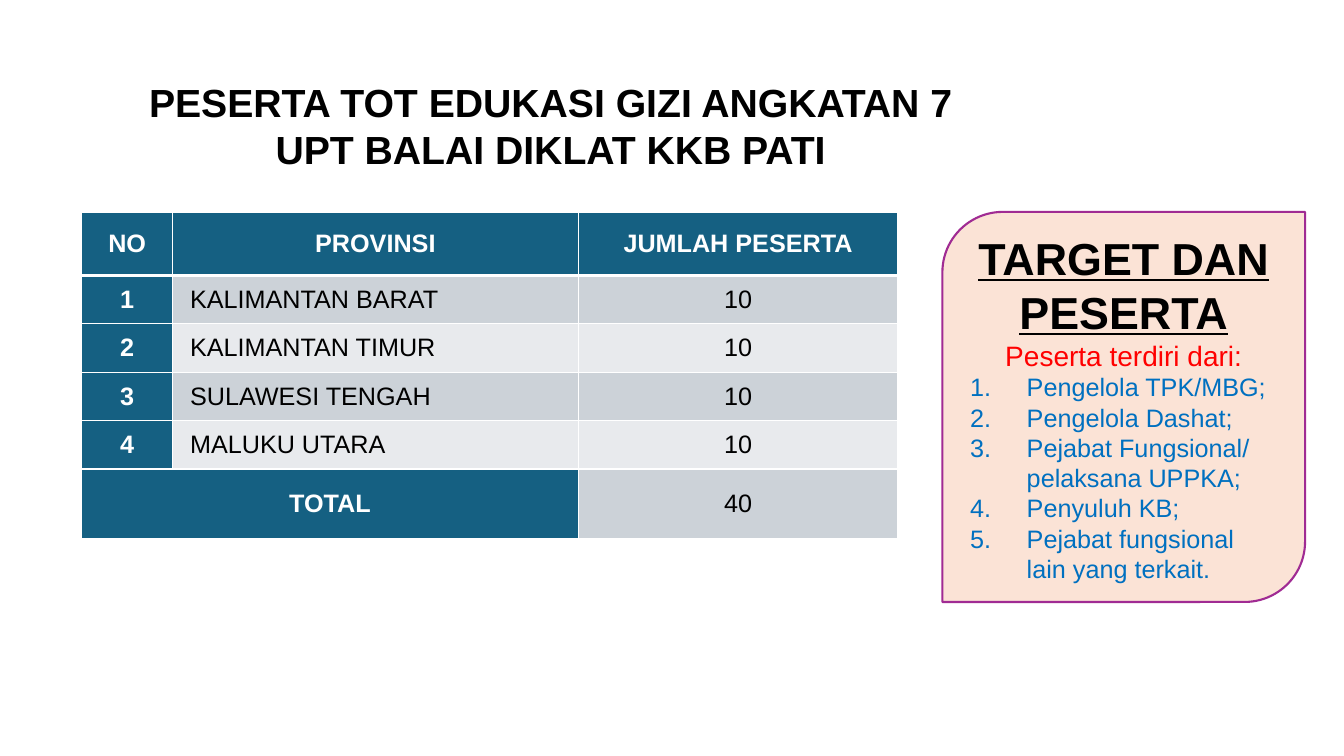
from lxml import etree
from pptx import Presentation
from pptx import util as u
from pptx.dml.color import RGBColor
from pptx.enum import shapes, text
from pptx.oxml import ns

COLORS = {"header": "156082", "odd": "CCD2D8", "even": "E8EAED", "white": "FFFFFF",
          "black": "000000", "panel": "FBE3D6", "outline": "A02B93",
          "red": "FF0000", "blue": "0070C0"}
CENTER, LEFT = text.PP_ALIGN.CENTER, text.PP_ALIGN.LEFT


def write(paragraph, words, align, color, **font):
    paragraph.alignment = align
    run = paragraph.add_run()
    run.text = words
    for name, value in {"name": "Arial", **font}.items():
        setattr(run.font, name, value)
    run.font.color.rgb = RGBColor.from_string(COLORS[color])


def add_xml(parent, tag, **attributes):
    return etree.SubElement(parent, ns.qn(tag), **attributes)


deck = Presentation()
deck.slide_width, deck.slide_height = u.Cm(33.87), u.Cm(19.05)
slide = deck.slides.add_slide(deck.slide_layouts[5])

# Title
title = slide.shapes.title
place = {"left": 3.18, "top": 1.85, "width": 21.39, "height": 2.64}
for side, length in place.items():
    setattr(title, side, u.Cm(length))
heading = title.text_frame
heading_format = {"word_wrap": True, "vertical_anchor": text.MSO_ANCHOR.TOP,
                  "auto_size": text.MSO_AUTO_SIZE.NONE}
for name, value in heading_format.items():
    setattr(heading, name, value)
for i, line in enumerate(["PESERTA TOT EDUKASI GIZI ANGKATAN 7", "UPT BALAI DIKLAT KKB PATI"]):
    paragraph = heading.add_paragraph() if i else heading.paragraphs[0]
    write(paragraph, line, CENTER, "black", size=u.Pt(28), bold=True)

# Participants per province
provinces = ["KALIMANTAN BARAT", "KALIMANTAN TIMUR", "SULAWESI TENGAH", "MALUKU UTARA"]
quota = 10
rows = [["NO", "PROVINSI", "JUMLAH PESERTA"]]
rows += [[str(n), province, str(quota)] for n, province in enumerate(provinces, 1)]
rows.append(["TOTAL", "", str(quota * len(provinces))])
last = len(rows) - 1

participants = slide.shapes.add_table(len(rows), 3, u.Cm(2.06), u.Cm(5.34),
                                      u.Cm(20.57), u.Cm(8.24)).table
for column, width in zip(participants.columns, [2.29, 10.22, 8.06]):
    column.width = u.Cm(width)
for row, height in zip(participants.rows, [1.6] + [1.22] * len(provinces) + [1.76]):
    row.height = u.Cm(height)
participants.cell(last, 0).merge(participants.cell(last, 1))

cell_format = {"margin_left": u.Cm(0.08), "margin_right": u.Cm(0.08), "margin_top": 0,
               "margin_bottom": 0, "vertical_anchor": text.MSO_ANCHOR.MIDDLE}
for r, values in enumerate(rows):
    for c, value in enumerate(values):
        cell = participants.cell(r, c)
        for name, setting in cell_format.items():
            setattr(cell, name, setting)
        # White borders, thicker under the header
        for side in "LRTB":
            thick = (r == 0 and side == "B") or (r == 1 and side == "T")
            border = add_xml(cell._tc.get_or_add_tcPr(), f"a:ln{side}",
                             w=str(u.Pt(3 if thick else 1)))
            add_xml(add_xml(border, "a:solidFill"), "a:srgbClr", val=COLORS["white"])
        is_header = r == 0 or c == 0 or (r == last and c == 1)
        shade = "header" if is_header else "odd" if r % 2 else "even"
        cell.fill.solid()
        cell.fill.fore_color.rgb = RGBColor.from_string(COLORS[shade])
        if not value:
            continue
        paragraph = cell.text_frame.paragraphs[0]
        is_province = c == 1 and not is_header
        if is_province:
            paragraph._p.get_or_add_pPr().set("indent", str(u.Cm(0.36)))
        write(paragraph, value, LEFT if is_province else CENTER,
              "white" if is_header else "black", size=u.Pt(18), bold=is_header)
# The total row continues the striping with the darker shade
participants.cell(last, 2).fill.fore_color.rgb = RGBColor.from_string(COLORS["odd"])

# Target panel
panel = slide.shapes.add_shape(shapes.MSO_SHAPE.ROUND_2_DIAG_RECTANGLE, u.Cm(23.75),
                               u.Cm(5.34), u.Cm(9.14), u.Cm(9.83))
panel.shadow.inherit = False
panel.fill.solid()
panel.fill.fore_color.rgb = RGBColor.from_string(COLORS["panel"])
panel.line.color.rgb = RGBColor.from_string(COLORS["outline"])
panel.line.width = u.Pt(1.5)
target = panel.text_frame
target.word_wrap = True
target.vertical_anchor = text.MSO_ANCHOR.MIDDLE
write(target.paragraphs[0], "TARGET DAN PESERTA", CENTER, "black",
      size=u.Pt(32), bold=True, underline=True)
write(target.add_paragraph(), "Peserta terdiri dari:", CENTER, "red", size=u.Pt(20))
for group in ["Pengelola TPK/MBG;", "Pengelola Dashat;", "Pejabat Fungsional/ pelaksana UPPKA;",
              "Penyuluh KB;", "Pejabat fungsional lain yang terkait."]:
    paragraph = target.add_paragraph()
    numbering = paragraph._p.get_or_add_pPr()
    numbering.set("marL", str(u.Cm(1.43)))
    numbering.set("indent", str(-u.Cm(1.43)))
    add_xml(numbering, "a:buFont", typeface="+mj-lt")
    add_xml(numbering, "a:buAutoNum", type="arabicPeriod")
    write(paragraph, group, LEFT, "blue", size=u.Pt(18))

deck.save("out.pptx")
